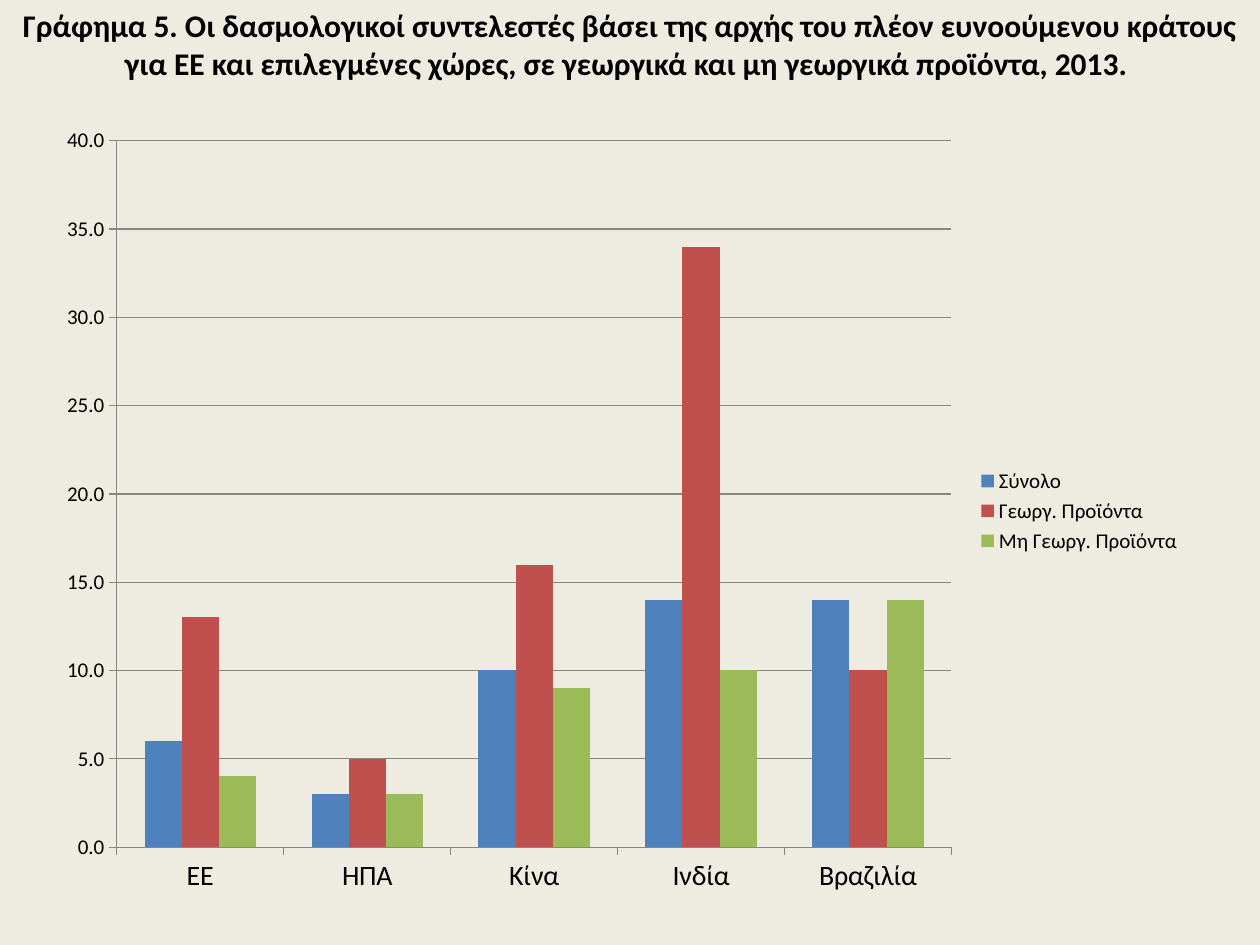
"""Build a slide charting MFN tariff rates for the EU and selected countries."""
from pptx import Presentation
from pptx.chart.data import CategoryChartData
from pptx.dml.color import RGBColor
from pptx.enum.chart import XL_CHART_TYPE, XL_LEGEND_POSITION, XL_TICK_MARK
from pptx.enum.text import MSO_ANCHOR, MSO_AUTO_SIZE, PP_ALIGN
from pptx.util import Inches, Pt

TITLE = ("Γράφημα 5. Οι δασμολογικοί συντελεστές βάσει της αρχής του πλέον "
         "ευνοούμενου κράτους για ΕΕ και επιλεγμένες χώρες, σε γεωργικά και "
         "μη γεωργικά προϊόντα, 2013. ")
COUNTRIES = ["ΕΕ", "ΗΠΑ", "Κίνα", "Ινδία", "Βραζιλία"]
BLACK = RGBColor(0x00, 0x00, 0x00)
CREAM = RGBColor(0xEE, 0xEC, 0xE1)
GRAY = RGBColor(0x86, 0x86, 0x86)
BLUE = RGBColor(0x4F, 0x81, 0xBD)
RED = RGBColor(0xC0, 0x50, 0x4D)
GREEN = RGBColor(0x9B, 0xBB, 0x59)
TARIFFS = [
    ("Σύνολο", [6, 3, 10, 14, 14], BLUE),
    ("Γεωργ. Προϊόντα", [13, 5, 16, 34, 10], RED),
    ("Μη Γεωργ. Προϊόντα", [4, 3, 9, 10, 14], GREEN),
]
FONT = "Calibri"


def style_font(font, size, bold=False):
    font.name, font.size, font.bold = FONT, Pt(size), bold
    font.color.rgb = BLACK


def style_line(line):
    line.color.rgb = GRAY
    line.width = Pt(0.75)


def add_title(s):
    sp = s.shapes.title
    sp.left, sp.top, sp.width, sp.height = map(Inches, (0, 0, 10, 7.37))
    tf = sp.text_frame
    tf.word_wrap = True
    tf.auto_size = MSO_AUTO_SIZE.NONE
    tf.vertical_anchor = MSO_ANCHOR.TOP
    p = tf.paragraphs[0]
    p.text = TITLE
    p.alignment = PP_ALIGN.CENTER
    style_font(p.font, 18, bold=True)


def add_tariff_chart(s):
    data = CategoryChartData(number_format="0.0")
    data.categories = COUNTRIES
    for name, rates, _ in TARIFFS:
        data.add_series(name, rates)
    chart = s.shapes.add_chart(XL_CHART_TYPE.COLUMN_CLUSTERED,
                               *map(Inches, (0.35, 0.89, 9.13, 6.33)), data).chart
    chart.has_title = False
    style_font(chart.font, 10)

    plot = chart.plots[0]
    plot.gap_width = 150
    plot.overlap = 0
    plot.vary_by_categories = False
    for series, (_, _, color) in zip(plot.series, TARIFFS):
        series.format.fill.solid()
        series.format.fill.fore_color.rgb = color
        series.invert_if_negative = False

    for axis, size in ((chart.category_axis, 16), (chart.value_axis, 12)):
        axis.major_tick_mark = XL_TICK_MARK.OUTSIDE
        axis.minor_tick_mark = XL_TICK_MARK.NONE
        style_font(axis.tick_labels.font, size)
        style_line(axis.format.line)
    rates_axis = chart.value_axis
    rates_axis.minimum_scale, rates_axis.maximum_scale = 0, 40
    rates_axis.major_unit = 5
    rates_axis.tick_labels.number_format = "0.0"
    rates_axis.tick_labels.number_format_is_linked = False
    rates_axis.has_major_gridlines = True
    style_line(rates_axis.major_gridlines.format.line)

    chart.has_legend = True
    chart.legend.position = XL_LEGEND_POSITION.RIGHT
    chart.legend.include_in_layout = False
    style_font(chart.legend.font, 12)


def main():
    prs = Presentation()
    prs.slide_width, prs.slide_height = Inches(10), Inches(7.5)
    s = prs.slides.add_slide(prs.slide_layouts[5])
    s.background.fill.solid()
    s.background.fill.fore_color.rgb = CREAM
    add_title(s)
    add_tariff_chart(s)
    prs.save("out.pptx")


if __name__ == "__main__":
    main()
